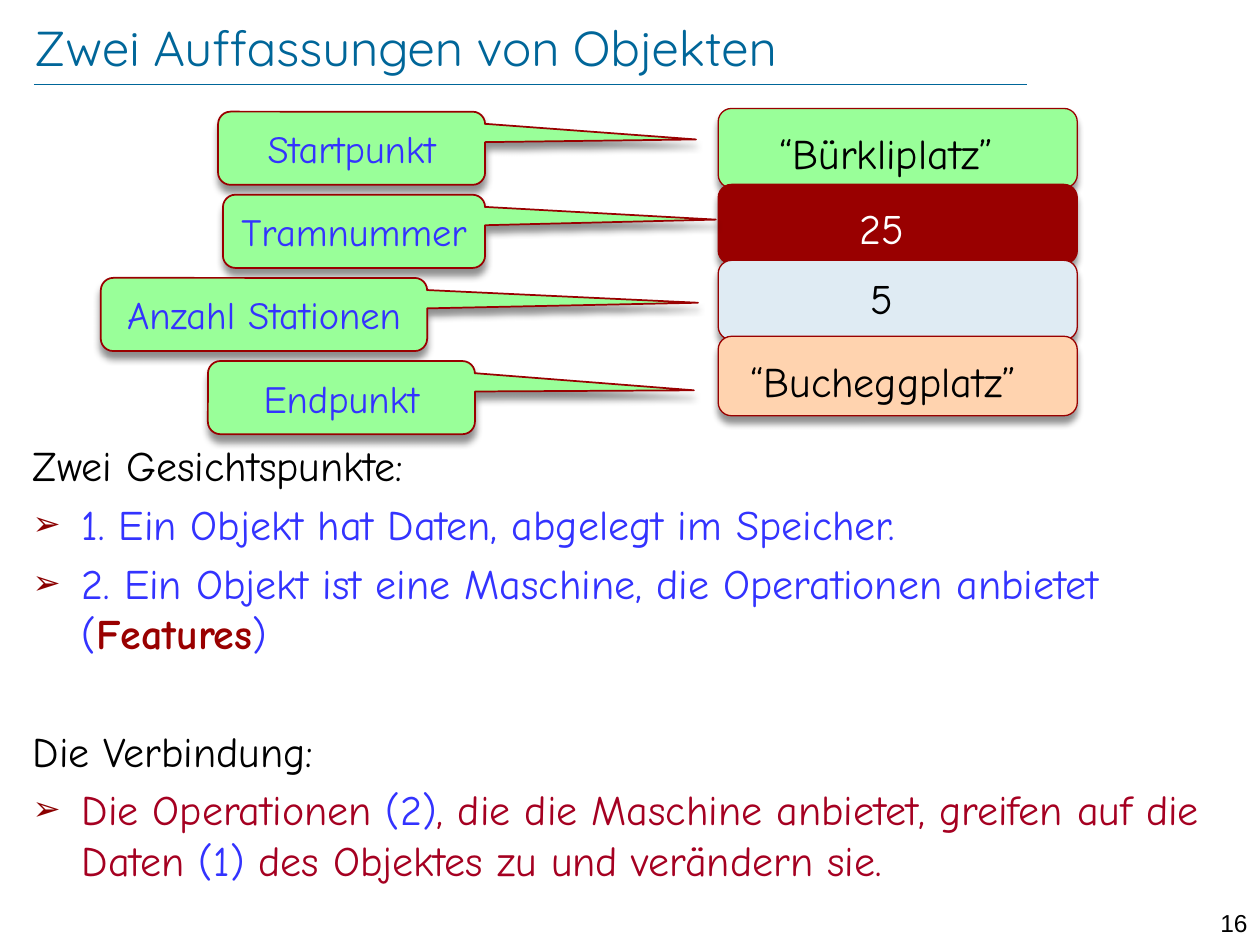
from dataclasses import dataclass

from pptx import Presentation
from pptx.dml.color import RGBColor
from pptx.enum.shapes import MSO_CONNECTOR, MSO_SHAPE
from pptx.enum.text import MSO_ANCHOR, MSO_AUTO_SIZE, PP_ALIGN
from pptx.oxml import parse_xml
from pptx.oxml.ns import nsdecls, qn
from pptx.util import Pt


@dataclass(frozen=True)
class Theme:
    teal: str = "006699"
    black: str = "000000"
    white: str = "FFFFFF"
    blue: str = "3333FF"
    red: str = "990000"
    wine: str = "A50021"
    mark: str = "8B0000"
    green: str = "99FF99"
    pale: str = "DFEBF3"
    peach: str = "FFD3AF"
    head: int = 28
    text: int = 24
    label: int = 22
    note: int = 14
    sans: str = "Quicksand"
    hand: str = "Comic Neue"
    plain: str = "Arial"


T = Theme()
FLAT = dict.fromkeys(
    ("margin_left", "margin_top", "margin_right", "margin_bottom"), 0)


def apply(item, form):
    for key, value in form.items():
        setattr(item, key, value)


def place(shape, left, top, width, height):
    apply(shape, {"left": Pt(left), "top": Pt(top),
                  "width": Pt(width), "height": Pt(height)})


def add_run(para, text, color, size=T.text, name=T.hand, bold=False):
    run = para.add_run()
    run.text = text
    apply(run.font, {"size": Pt(size), "name": name, "bold": bold})
    run.font.color.rgb = RGBColor.from_string(color)


def add_label(slide, box, text, color, align, size=T.text, name=T.hand,
              fit=MSO_AUTO_SIZE.SHAPE_TO_FIT_TEXT):
    shape = slide.shapes.add_textbox(*map(Pt, box))
    apply(shape.text_frame, {"word_wrap": True, "auto_size": fit})
    para = shape.text_frame.paragraphs[0]
    para.alignment = align
    add_run(para, text, color, size, name)


def add_block(slide, kind, box, fill, width):
    """Add a filled, outlined shape with a soft shadow straight below it."""
    shape = slide.shapes.add_shape(kind, *map(Pt, box))
    shape.fill.solid()
    shape.fill.fore_color.rgb = RGBColor.from_string(fill)
    shape.line.color.rgb = RGBColor.from_string(T.red)
    shape.line.width = Pt(width)
    shape.shadow.inherit = False
    shape._element.spPr.find(qn("a:effectLst")).append(parse_xml(
        f'<a:outerShdw {nsdecls("a")} blurRad="{Pt(4)}" dist="{Pt(4)}" '
        'dir="5400000" rotWithShape="0"><a:srgbClr val="000000">'
        '<a:alpha val="43000"/></a:srgbClr></a:outerShdw>'))
    return shape


def add_callout(slide, box, text, tip):
    shape = add_block(slide, MSO_SHAPE.ROUNDED_RECTANGULAR_CALLOUT,
                      box, T.green, 1)
    for i, value in enumerate((*tip, 0.17)):
        shape.adjustments[i] = value
    apply(shape.text_frame, {"margin_left": 0, "margin_right": 0,
                             "word_wrap": True,
                             "vertical_anchor": MSO_ANCHOR.MIDDLE})
    para = shape.text_frame.paragraphs[0]
    para.alignment = PP_ALIGN.CENTER
    add_run(para, text, T.blue, T.label)


def set_bullet(para, mark):
    props = para._p.get_or_add_pPr()
    apply_indent = {"marL": Pt(28), "indent": -Pt(28)}
    for key, value in apply_indent.items():
        props.set(key, str(int(value)))
    if mark:
        parts = (f'<a:buClr {nsdecls("a")}><a:srgbClr val="{T.mark}"/></a:buClr>',
                 f'<a:buSzPct {nsdecls("a")} val="80000"/>',
                 f'<a:buChar {nsdecls("a")} char="➢"/>')
    else:
        parts = (f'<a:buNone {nsdecls("a")}/>',)
    for part in parts:
        props.append(parse_xml(part))


def fill_title(slide, text):
    title = slide.shapes.title
    place(title, 19.4, 9.4, 625.7, 34.6)
    apply(title.text_frame, {**FLAT, "word_wrap": True,
                             "auto_size": MSO_AUTO_SIZE.NONE,
                             "vertical_anchor": MSO_ANCHOR.MIDDLE})
    para = title.text_frame.paragraphs[0]
    para.alignment = PP_ALIGN.LEFT
    add_run(para, text, T.teal, T.head, T.sans)


def fill_body(slide, rows):
    body = slide.placeholders[1]
    place(body, 11.5, 247.7, 690.5, 265.7)
    frame = body.text_frame
    apply(frame, {"word_wrap": True, "auto_size": MSO_AUTO_SIZE.NONE})
    for i, (mark, gap, runs) in enumerate(rows):
        para = frame.add_paragraph() if i else frame.paragraphs[0]
        set_bullet(para, mark)
        apply(para, {"level": int(mark), "space_before": Pt(gap),
                     "alignment": PP_ALIGN.LEFT})
        for text, color in runs:
            add_run(para, text, color, bold=text == "Features")


def add_rule(slide):
    rule = slide.shapes.add_connector(
        MSO_CONNECTOR.STRAIGHT, Pt(19.4), Pt(48.2), Pt(586.8), Pt(48.2))
    rule.line.color.rgb = RGBColor.from_string(T.teal)
    rule.line.width = Pt(0.25)
    rule._element.spPr.append(parse_xml(f'<a:effectLst {nsdecls("a")}/>'))


def main():
    deck = Presentation()
    deck.slide_width, deck.slide_height = Pt(720), Pt(540)
    slide = deck.slides.add_slide(deck.slide_layouts[1])

    # Heading, rule and page number
    add_rule(slide)
    add_label(slide, (680.4, 515.5, 39.6, 17.3), "16", T.black,
              PP_ALIGN.RIGHT, T.note, T.plain, MSO_AUTO_SIZE.NONE)
    fill_title(slide, "Zwei Auffassungen von Objekten")

    # Both views of an object, and what joins them
    fill_body(slide, (
        (False, 0, [("Zwei Gesichtspunkte:", T.black)]),
        (True, 4.8, [("1. Ein Objekt hat Daten, abgelegt im Speicher.", T.blue)]),
        (True, 4.8, [("2. Ein Objekt ist eine Maschine, die Operationen anbietet (",
                      T.blue), ("Features", T.red), (")", T.blue)]),
        (False, 38.3, [("Die Verbindung:", T.black)]),
        (True, 4.8, [("Die Operationen ", T.wine), ("(2)", T.blue),
                     (", die die Maschine anbietet, greifen auf die Daten ", T.wine),
                     ("(1)", T.blue),
                     (" des Objektes zu und verändern sie.", T.wine)]),
    ))

    # Stacked memory fields
    for i, fill in enumerate((T.green, T.red, T.pale, T.peach)):
        add_block(slide, MSO_SHAPE.ROUNDED_RECTANGLE,
                  (410.4, 62 + 43.4 * i, 205.2, 45.4), fill, 0.75)

    # Field values
    left, mid = PP_ALIGN.LEFT, PP_ALIGN.CENTER
    for text, x, y, width, color, align in (
            ("“Bürkliplatz”", 438.5, 69.1, 175.7, T.black, left),
            ("25", 416.2, 112.3, 175.7, T.white, mid),
            ("5", 416.2, 151.9, 175.7, T.black, mid),
            ("“Bucheggplatz”", 421.9, 199.4, 193, T.black, left)):
        add_label(slide, (x, y, width, 36), text, color, align)

    # Callouts that name the fields
    for i, (text, x, width, tip) in enumerate((
            ("Startpunkt", 124.6, 152.6, (1.29, -0.12)),
            ("Tramnummer", 127.4, 149.8, (1.38, -0.16)),
            ("Anzahl Stationen", 57.6, 186.5, (1.33, -0.16)),
            ("Endpunkt", 118.8, 152.6, (1.32, -0.1)))):
        add_callout(slide, (x, 63.8 + 47.5 * i, width, 41.8), text, tip)

    deck.save("out.pptx")


if __name__ == "__main__":
    main()
